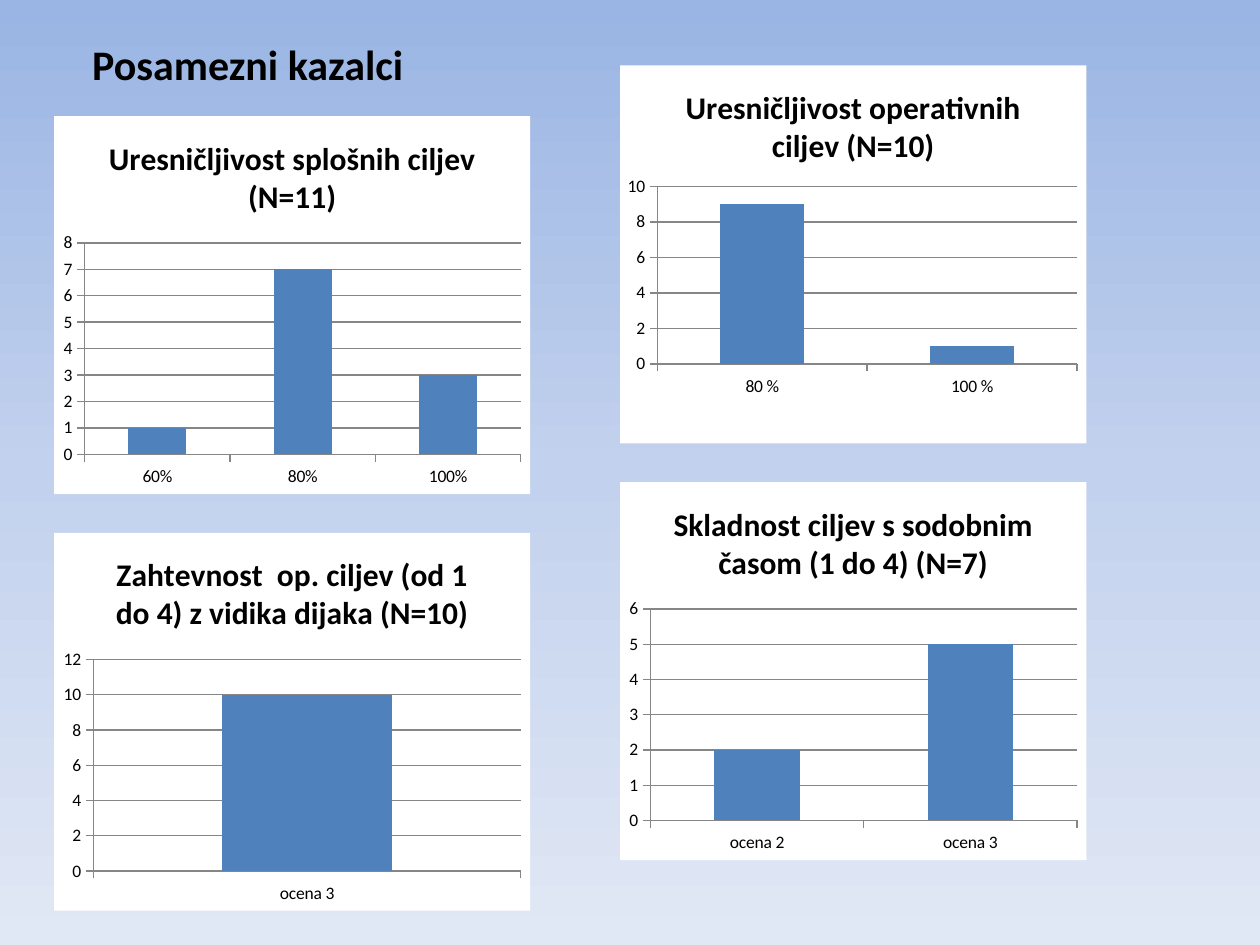
from copy import deepcopy
from dataclasses import dataclass
from typing import Optional

from lxml.etree import SubElement
from pptx import Presentation
from pptx.chart.data import CategoryChartData
from pptx.dml.color import RGBColor as Rgb
from pptx.enum.chart import XL_CHART_TYPE as ChartType, XL_TICK_MARK as TickMark
from pptx.enum.text import MSO_ANCHOR as Anchor, PP_ALIGN as Align
from pptx.oxml import parse_xml
from pptx.oxml.ns import nsdecls, qn
from pptx.util import Cm, Pt


@dataclass(frozen=True)
class Theme:
    font: str = "Calibri"
    text: str = "000000"
    bar: str = "4F81BD"
    panel: str = "FFFFFF"
    line: str = "868686"
    backdrop: tuple = ((0, "9AB5E4"), (0.5, "C2D1ED"), (1, "E1E8F5"))
    heading_size: int = 24
    title_size: int = 18
    label_size: int = 10


@dataclass(frozen=True)
class Column:
    left: float
    top: float
    width: float


@dataclass(frozen=True)
class Indicator:
    title: str
    categories: tuple
    values: tuple
    axis_max: int
    axis_step: int
    column: Column
    row: int
    plot_frame: Optional[tuple] = None  # x, y, w, h as shares of the chart


THEME = Theme()
CHART_HEIGHT = 7.62
ROW_STEP = 8.4
LEFT = Column(1.09, 2.34, 9.6)
RIGHT = Column(12.5, 1.32, 9.4)

INDICATORS = (
    Indicator("Uresničljivost splošnih ciljev (N=11)",
              ("60%", "80%", "100%"), (1, 7, 3), 8, 1, LEFT, 0),
    Indicator("Uresničljivost operativnih ciljev (N=10)",
              ("80 %", "100 %"), (9, 1), 10, 2, RIGHT, 0,
              plot_frame=(0.08, 0.32, 0.9, 0.47)),
    Indicator("Zahtevnost  op. ciljev (od 1 do 4) z vidika dijaka (N=10)",
              ("ocena 3",), (10,), 12, 2, LEFT, 1),
    Indicator("Skladnost ciljev s sodobnim časom (1 do 4) (N=7)",
              ("ocena 2", "ocena 3"), (2, 5), 6, 1, RIGHT, 1),
)


def write(frame, text: str, *, size: int, bold: bool = False) -> None:
    para = frame.paragraphs[0]
    para.alignment = Align.CENTER
    span = para.add_run()
    span.text = text
    style(span.font, size, bold)


def style(font, size: int, bold: bool = False) -> None:
    font.name = THEME.font
    font.size = Pt(size)
    font.bold = bold
    font.color.rgb = Rgb.from_string(THEME.text)


def paint_background(page) -> None:
    fill = page.background.fill
    fill.gradient()
    fill.gradient_angle = 270
    first = next(page.element.iter(qn("a:gs")))
    first.addnext(deepcopy(first))
    for stop, (position, color) in zip(fill.gradient_stops, THEME.backdrop):
        stop.position = position
        stop.color.rgb = Rgb.from_string(color)


def add_heading(page, text: str) -> None:
    box = page.shapes.add_textbox(Cm(0.08), Cm(0), Cm(9.83), Cm(2.57))
    frame = box.text_frame
    frame.word_wrap = True
    frame.vertical_anchor = Anchor.MIDDLE
    write(frame, text, size=THEME.heading_size, bold=True)


def panel_properties():
    """White fill without an outline, for a chart or its plot area."""
    return parse_xml(
        f'<c:spPr {nsdecls("c", "a")}><a:solidFill><a:srgbClr val="{THEME.panel}"/>'
        "</a:solidFill><a:ln><a:noFill/></a:ln></c:spPr>")


def place_plot(plot_area, frame: tuple) -> None:
    for old in plot_area.findall(qn("c:layout")):
        plot_area.remove(old)
    layout = parse_xml(f'<c:layout {nsdecls("c")}/>')
    manual = SubElement(layout, qn("c:manualLayout"))
    settings = [("layoutTarget", "inner"), ("xMode", "edge"), ("yMode", "edge")]
    for name, value in settings + list(zip("xywh", frame)):
        SubElement(manual, qn(f"c:{name}")).set("val", str(value))
    plot_area.insert(0, layout)


def draw_line(line) -> None:
    line.color.rgb = Rgb.from_string(THEME.line)
    line.width = Pt(0.75)


def add_indicator(page, item: Indicator) -> None:
    data = CategoryChartData()
    data.categories = item.categories
    data.add_series("Series 1", item.values)
    column = item.column
    chart = page.shapes.add_chart(
        ChartType.COLUMN_CLUSTERED, Cm(column.left),
        Cm(column.top + item.row * ROW_STEP), Cm(column.width),
        Cm(CHART_HEIGHT), data).chart

    style(chart.font, THEME.label_size)
    chart.has_legend = False
    chart.has_title = True
    write(chart.chart_title.text_frame, item.title,
          size=THEME.title_size, bold=True)
    chart.chart_title.include_in_layout = False

    plot = chart.plots[0]
    plot.gap_width = 150
    plot.vary_by_categories = False
    bar_fill = plot.series[0].format.fill
    bar_fill.solid()
    bar_fill.fore_color.rgb = Rgb.from_string(THEME.bar)

    for axis in (chart.category_axis, chart.value_axis):
        axis.major_tick_mark = TickMark.OUTSIDE
        axis.minor_tick_mark = TickMark.NONE
        draw_line(axis.format.line)
    scale = chart.value_axis
    scale.minimum_scale = 0
    scale.maximum_scale = item.axis_max
    scale.major_unit = item.axis_step
    scale.has_major_gridlines = True
    draw_line(scale.major_gridlines.format.line)

    body = chart.element.find(qn("c:chart"))
    plot_area = body.find(qn("c:plotArea"))
    body.addnext(panel_properties())
    plot_area.append(panel_properties())
    if item.plot_frame:
        place_plot(plot_area, item.plot_frame)


def main() -> None:
    deck = Presentation()
    deck.slide_width, deck.slide_height = Cm(25.4), Cm(19.05)
    page = deck.slides.add_slide(deck.slide_layouts[6])
    paint_background(page)
    add_heading(page, "Posamezni kazalci")
    for item in INDICATORS:
        add_indicator(page, item)
    deck.save("out.pptx")


if __name__ == "__main__":
    main()
